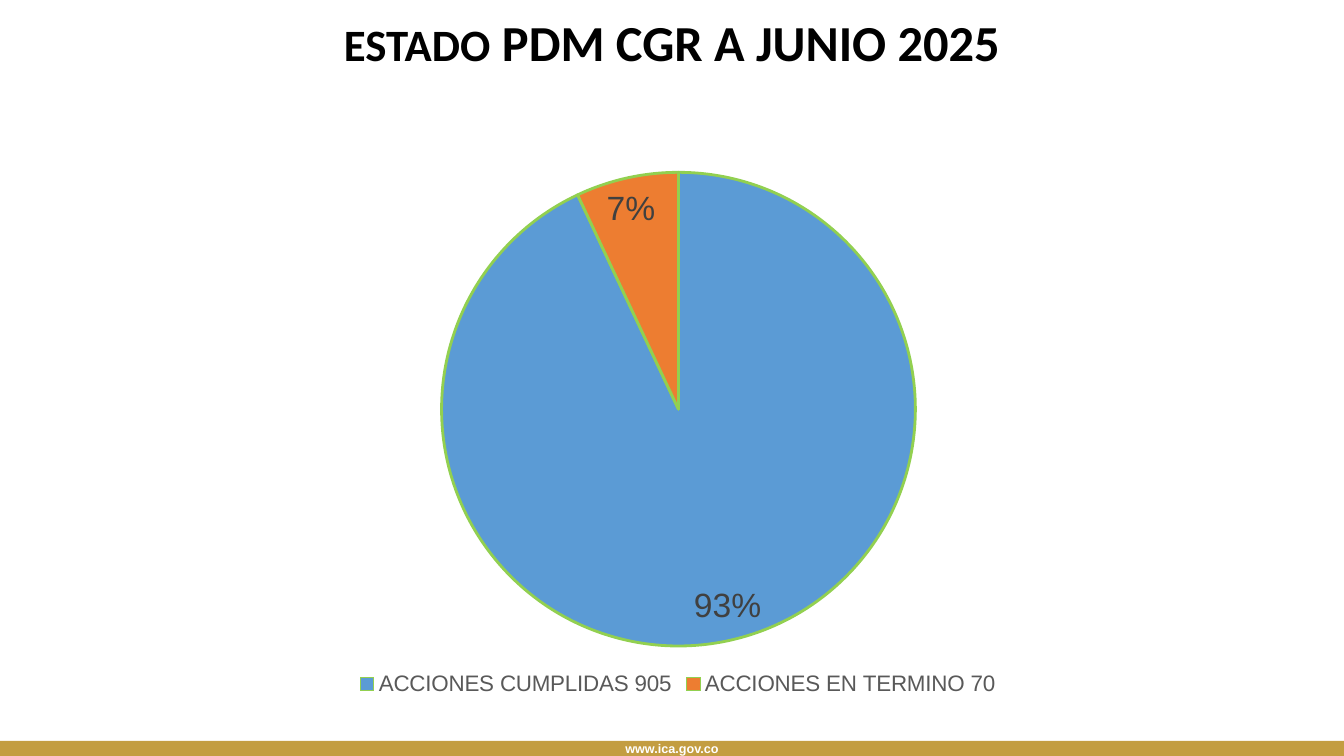
"""Build the slide on the state of the PDM CGR actions."""
from lxml import etree
from pptx import Presentation
from pptx.chart.data import CategoryChartData
from pptx.dml.color import RGBColor
from pptx.enum.chart import XL_CHART_TYPE, XL_LABEL_POSITION, XL_LEGEND_POSITION
from pptx.enum.shapes import MSO_SHAPE
from pptx.enum.text import MSO_ANCHOR, PP_ALIGN
from pptx.oxml.ns import qn
from pptx.util import Inches, Pt

PIE = XL_CHART_TYPE.PIE
BEST_FIT = XL_LABEL_POSITION.BEST_FIT
BOTTOM = XL_LEGEND_POSITION.BOTTOM
RECTANGLE = MSO_SHAPE.RECTANGLE
TOP, MIDDLE = MSO_ANCHOR.TOP, MSO_ANCHOR.MIDDLE
CENTER = PP_ALIGN.CENTER

WIDTH, HEIGHT = 13.33, 7.5
TITLE = [("ESTADO", 32), (" PDM CGR A JUNIO 2025", 36)]
ACTIONS = [
    ("ACCIONES CUMPLIDAS 905", 0.93, "5B9BD5"),
    ("ACCIONES EN TERMINO 70", 0.07, "ED7D31"),
]
WEBSITE = "www.ica.gov.co"
FOOTER_HEIGHT = 0.15
TITLE_BOX = (1.18, 0.13, 10.97, 0.78)
CHART_BOX = (1.06, 1.17, 11.33, 5.78)
PIE_LEFT, PIE_TOP, PIE_SIZE = 4.38, 1.71, 4.7


def rgb(value):
    """Return the colour for a hex string."""
    return RGBColor.from_string(value)


def style(font, size, color, name="Arial", bold=False):
    """Format a font."""
    font.name, font.bold = name, bold
    font.color.rgb = rgb(color)
    if size:
        font.size = Pt(size)


def add_footer(slide):
    """Add the band with the web address."""
    band = slide.shapes.add_shape(
        RECTANGLE, 0, Inches(HEIGHT - FOOTER_HEIGHT), Inches(WIDTH), Inches(FOOTER_HEIGHT))
    band.shadow.inherit = False
    band.fill.solid()
    band.fill.fore_color.rgb = rgb("C39D41")
    band.line.fill.background()
    frame = band.text_frame
    frame.margin_top = frame.margin_bottom = 0
    frame.vertical_anchor = MIDDLE
    address = frame.paragraphs[0]
    address.text = WEBSITE
    address.alignment = CENTER
    style(address.font, 9, "FFFFFF", bold=True)


def add_title(slide):
    """Fill and format the title placeholder."""
    title = slide.shapes.title
    title.left, title.top, title.width, title.height = map(Inches, TITLE_BOX)
    title.text_frame.vertical_anchor = TOP
    heading = title.text_frame.paragraphs[0]
    heading.alignment = CENTER
    heading.line_spacing = 0.9
    style(heading.font, None, "000000", "Calibri", True)
    for words, size in TITLE:
        run = heading.add_run()
        run.text = words
        run.font.size = Pt(size)


def place_pie(chart):
    """Fix the pie's square inside the chart frame."""
    left, top, width, height = CHART_BOX
    plot_area = chart.plots[0]._element.getparent()
    for old in plot_area.findall(qn("c:layout")):
        plot_area.remove(old)
    layout = etree.Element(qn("c:layout"))
    manual = etree.SubElement(layout, qn("c:manualLayout"))
    settings = [
        ("layoutTarget", "inner"), ("xMode", "edge"), ("yMode", "edge"),
        ("x", (PIE_LEFT - left) / width), ("y", (PIE_TOP - top) / height),
        ("w", PIE_SIZE / width), ("h", PIE_SIZE / height),
    ]
    for tag, value in settings:
        etree.SubElement(manual, qn("c:" + tag)).set("val", str(value))
    plot_area.insert(0, layout)


def add_actions_chart(slide):
    """Add the pie of actions with its labels and legend."""
    data = CategoryChartData(number_format="0%")
    data.categories = [name for name, _, _ in ACTIONS]
    data.add_series("Series 1", [share for _, share, _ in ACTIONS])
    chart = slide.shapes.add_chart(PIE, *map(Inches, CHART_BOX), data).chart
    chart.has_title = False
    style(chart.font, 10, "000000", "Calibri")
    chart.has_legend = True
    chart.legend.position = BOTTOM
    chart.legend.include_in_layout = False
    style(chart.legend.font, 16, "595959")
    plot = chart.plots[0]
    plot.vary_by_categories = True
    for index, (_, _, color) in enumerate(ACTIONS):
        slice_format = plot.series[0].points[index].format
        slice_format.fill.solid()
        slice_format.fill.fore_color.rgb = rgb(color)
        slice_format.line.color.rgb = rgb("92D050")
        slice_format.line.width = Pt(2)
    labels = plot.series[0].data_labels
    labels.show_value = True
    labels.number_format = "0%"
    labels.number_format_is_linked = False
    labels.position = BEST_FIT
    style(labels.font, 24, "404040")
    place_pie(chart)


def main():
    """Build and save the presentation."""
    deck = Presentation()
    deck.slide_width, deck.slide_height = Inches(WIDTH), Inches(HEIGHT)
    slide = deck.slides.add_slide(deck.slide_layouts[5])
    add_footer(slide)
    add_title(slide)
    add_actions_chart(slide)
    deck.save("out.pptx")


if __name__ == "__main__":
    main()
